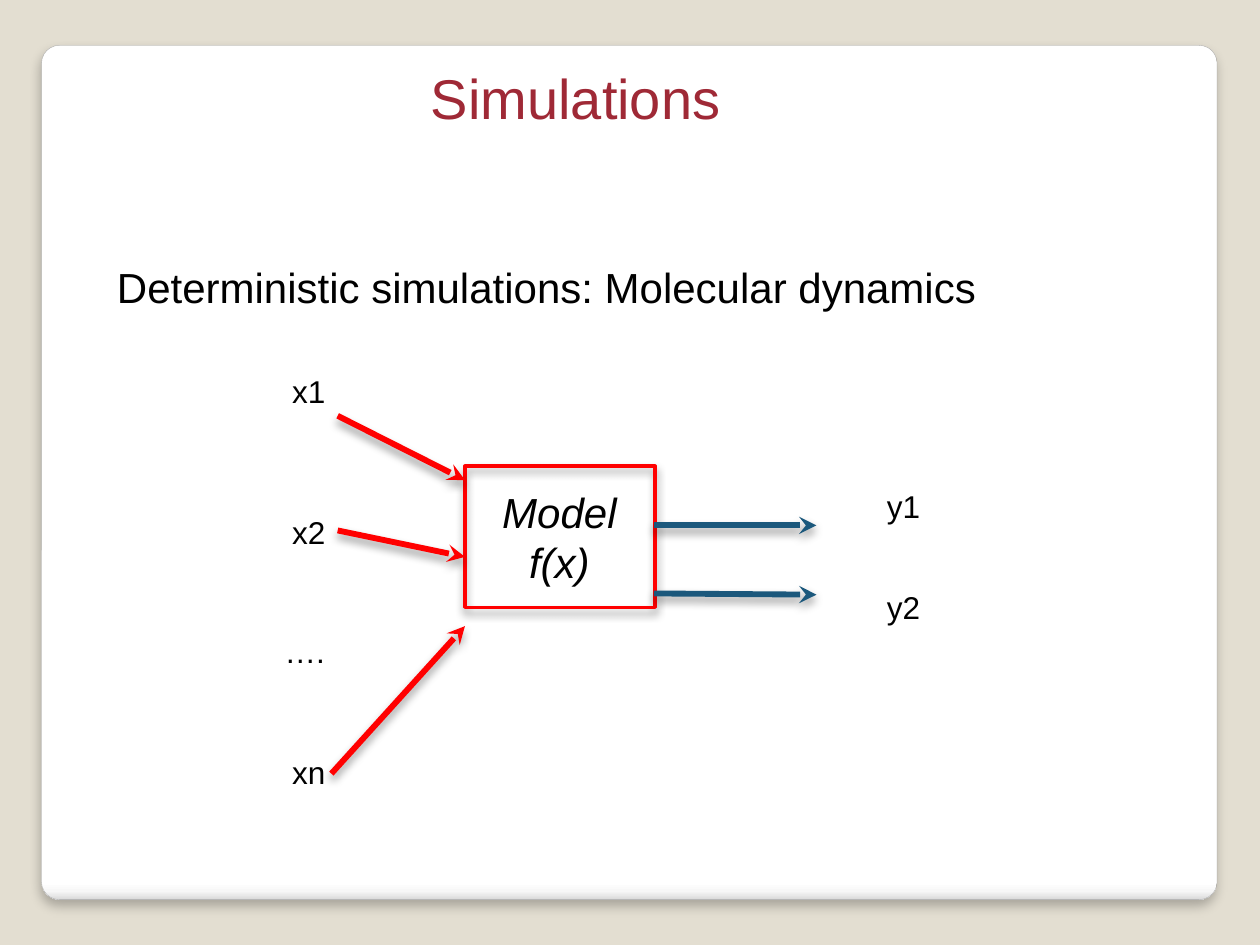
from lxml import etree
from pptx import Presentation
from pptx.dml.color import RGBColor
from pptx.enum.shapes import MSO_CONNECTOR, MSO_SHAPE
from pptx.enum.text import MSO_ANCHOR, MSO_AUTO_SIZE, PP_ALIGN
from pptx.oxml.ns import qn
from pptx.util import Inches, Pt

LEFT, MID = PP_ALIGN.LEFT, PP_ALIGN.CENTER
TOP, NONE = MSO_ANCHOR.TOP, MSO_AUTO_SIZE.NONE
LINE, RECT, ROUND = MSO_CONNECTOR.STRAIGHT, MSO_SHAPE.RECTANGLE, MSO_SHAPE.ROUNDED_RECTANGLE

INK = {"back": "E3DED1", "title": "9F2936", "text": "000000", "edge": "A4A4A4",
       "in": "FF0000", "out": "1B587C"}
STOPS = [(0, "FFFFFF"), (98, "FFFFFF"), (99, "F7F7F7"), (100, "DADADA")]
PANEL = (0.33, 0.36, 9.33, 6.78)
BOX = (3.69, 3.7, 1.51, 1.12)
PORT_IN, PORT_OUT, END = BOX[0], 5.19, 6.48
SOFT, DEEP = (25, 6, 4), (40, 5.2, 3)

TITLE = ("Simulations", (3.32, 0.45, 2.6, 0.66))
LEAD = ("Deterministic simulations: Molecular dynamics", (0.83, 2.03, 7.09, 0.51))
MODEL = (["Model", "f(x)"], (3.84, 3.81, 1.2, 0.91))
MARKS = [("x1", 2.22, 2.9), ("x2", 2.22, 4.02), ("….", 2.16, 4.97), ("xn", 2.22, 5.93),
         ("y1", 6.94, 3.82), ("y2", 6.94, 4.62)]
FLOWS = [("in", (2.68, 3.3), (PORT_IN, 3.81)),
         ("in", (2.68, 4.21), (PORT_IN, 4.42)),
         ("in", (2.63, 6.14), (PORT_IN, 4.97)),
         ("out", (PORT_OUT, 4.17), (END, 4.17)),
         ("out", (PORT_OUT, 4.71), (END, 4.72))]


def apply(item, **vals):
    for key, val in vals.items():
        setattr(item, key, val)


def tint(name):
    return RGBColor.from_string(INK[name])


def write(shape, lines, size, ink="text", align=LEFT, italic=False):
    frame = shape.text_frame
    apply(frame, text="\n".join(lines), word_wrap=False, auto_size=NONE,
          vertical_anchor=TOP)
    for para in frame.paragraphs:
        para.alignment = align
        for run in para.runs:
            apply(run.font, name="Arial", size=Pt(size), italic=italic)
            run.font.color.rgb = tint(ink)


def label(slide, lines, at, size, **style):
    write(slide.shapes.add_textbox(*map(Inches, at)), lines, size, **style)


def stroke(shape, ink, width):
    shape.line.color.rgb = tint(ink)
    shape.line.width = Pt(width)


def shade(shape, alpha, blur, dist):
    props = shape.element.spPr
    list_ = etree.SubElement(props, qn("a:effectLst"))
    cast = etree.SubElement(list_, qn("a:outerShdw"), blurRad=str(Pt(blur)),
                            dist=str(Pt(dist)), dir="5400000", rotWithShape="0")
    hue = etree.SubElement(cast, qn("a:srgbClr"), val=INK["text"])
    etree.SubElement(hue, qn("a:alpha"), val=str(alpha * 1000))


def fade(shape):
    shape.fill.gradient()
    shape.fill.gradient_angle = 270
    stops = shape.element.spPr.find(".//" + qn("a:gsLst"))
    for old in list(stops):
        stops.remove(old)
    for pos, hue in STOPS:
        stop = etree.SubElement(stops, qn("a:gs"), pos=str(pos * 1000))
        etree.SubElement(stop, qn("a:srgbClr"), val=hue)


def panel(slide):
    card = slide.shapes.add_shape(ROUND, *map(Inches, PANEL))
    card.adjustments[0] = 0.021
    fade(card)
    stroke(card, "edge", 0.16)
    shade(card, *SOFT)
    card.element.getparent().insert(2, card.element)


def arrow(slide, ink, start, end):
    line = slide.shapes.add_connector(LINE, *map(Inches, start + end))
    stroke(line, ink, 3.35)
    etree.SubElement(line.line._get_or_add_ln(), qn("a:tailEnd"), type="stealth")
    shade(line, *DEEP)


def main():
    deck = Presentation()
    apply(deck, slide_width=Inches(10), slide_height=Inches(7.5))
    slide = deck.slides.add_slide(deck.slide_layouts[5])
    slide.background.fill.solid()
    slide.background.fill.fore_color.rgb = tint("back")
    panel(slide)

    text, at = TITLE
    title = slide.shapes.title
    apply(title, **dict(zip(("left", "top", "width", "height"), map(Inches, at))))
    write(title, [text], 32, "title")
    label(slide, [LEAD[0]], LEAD[1], 24)
    label(slide, *MODEL, 24, align=MID, italic=True)

    box = slide.shapes.add_shape(RECT, *map(Inches, BOX))
    box.fill.background()
    stroke(box, "in", 2)
    shade(box, *DEEP)
    for flow in FLOWS:
        arrow(slide, *flow)
    for text, left, top in MARKS:
        label(slide, [text], (left, top, 0.48, 0.4), 18)
    deck.save("out.pptx")


if __name__ == "__main__":
    main()
